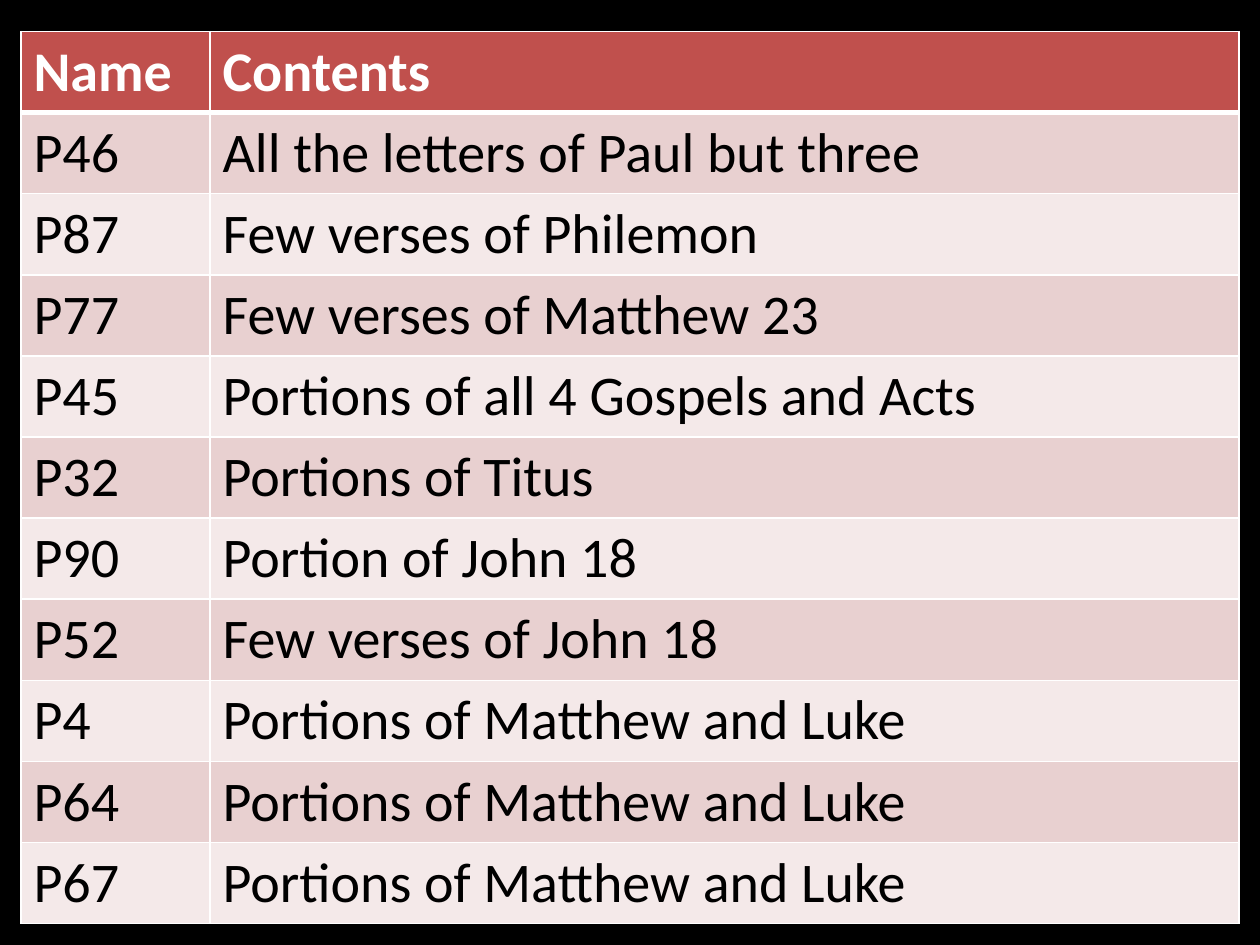
from dataclasses import dataclass

from pptx import Presentation
from pptx.dml.color import RGBColor
from pptx.enum.text import PP_ALIGN
from pptx.oxml import parse_xml
from pptx.oxml.ns import nsdecls
from pptx.util import Pt


@dataclass(frozen=True)
class Theme:
    font: str = "Calibri"
    text_size: float = 32
    background: str = "000000"
    header_fill: str = "C0504D"
    header_text: str = "FFFFFF"
    body_text: str = "000000"
    bands: tuple = ("E8D0D0", "F4E9E9")
    border: str = "FFFFFF"
    thin: float = 1
    thick: float = 3


THEME = Theme()
NAME_WIDTH = 108
ROWS = [
    ("Name", "Contents"),
    ("P46", "All the letters of Paul but three"),
    ("P87", "Few verses of Philemon"),
    ("P77", "Few verses of Matthew 23"),
    ("P45", "Portions of all 4 Gospels and Acts"),
    ("P32", "Portions of Titus"),
    ("P90", "Portion of John 18"),
    ("P52", "Few verses of John 18"),
    ("P4", "Portions of Matthew and Luke"),
    ("P64", "Portions of Matthew and Luke"),
    ("P67", "Portions of Matthew and Luke"),
]


def set_borders(cell, top, bottom):
    """Draw the four sides of a cell; must run before its fill is set."""
    properties = cell._tc.get_or_add_tcPr()
    widths = {"L": THEME.thin, "R": THEME.thin, "T": top, "B": bottom}
    for side, width in widths.items():
        properties.append(parse_xml(
            f'<a:ln{side} {nsdecls("a")} w="{Pt(width)}">'
            f'<a:solidFill><a:srgbClr val="{THEME.border}"/></a:solidFill>'
            f'</a:ln{side}>'))


def write_cell(cell, text, fill, color, bold):
    cell.fill.solid()
    cell.fill.fore_color.rgb = RGBColor.from_string(fill)
    para = cell.text_frame.paragraphs[0]
    para.alignment = PP_ALIGN.LEFT
    span = para.add_run()
    span.text = text
    span.font.name = THEME.font
    span.font.size = Pt(THEME.text_size)
    span.font.bold = bold
    span.font.color.rgb = RGBColor.from_string(color)


def add_papyri_table(page, left, top, width, height):
    frame = page.shapes.add_table(len(ROWS), 2, Pt(left), Pt(top), Pt(width), Pt(height))
    table = frame.table
    table.columns[0].width = Pt(NAME_WIDTH)
    table.columns[1].width = Pt(width - NAME_WIDTH)

    for index, texts in enumerate(ROWS):
        is_header = index == 0
        fill = THEME.header_fill if is_header else THEME.bands[(index - 1) % 2]
        color = THEME.header_text if is_header else THEME.body_text
        # The rule under the header is shared by the first two rows
        above = THEME.thick if index == 1 else THEME.thin
        below = THEME.thick if is_header else THEME.thin
        for column, text in enumerate(texts):
            cell = table.cell(index, column)
            set_borders(cell, above, below)
            write_cell(cell, text, fill, color, is_header)


def main():
    deck = Presentation()
    deck.slide_width, deck.slide_height = Pt(720), Pt(540)
    page = deck.slides.add_slide(deck.slide_layouts[6])

    # Black backdrop
    page.background.fill.solid()
    page.background.fill.fore_color.rgb = RGBColor.from_string(THEME.background)

    # Papyri and their contents
    add_papyri_table(page, left=12, top=18, width=696, height=502)
    deck.save("out.pptx")


if __name__ == "__main__":
    main()
